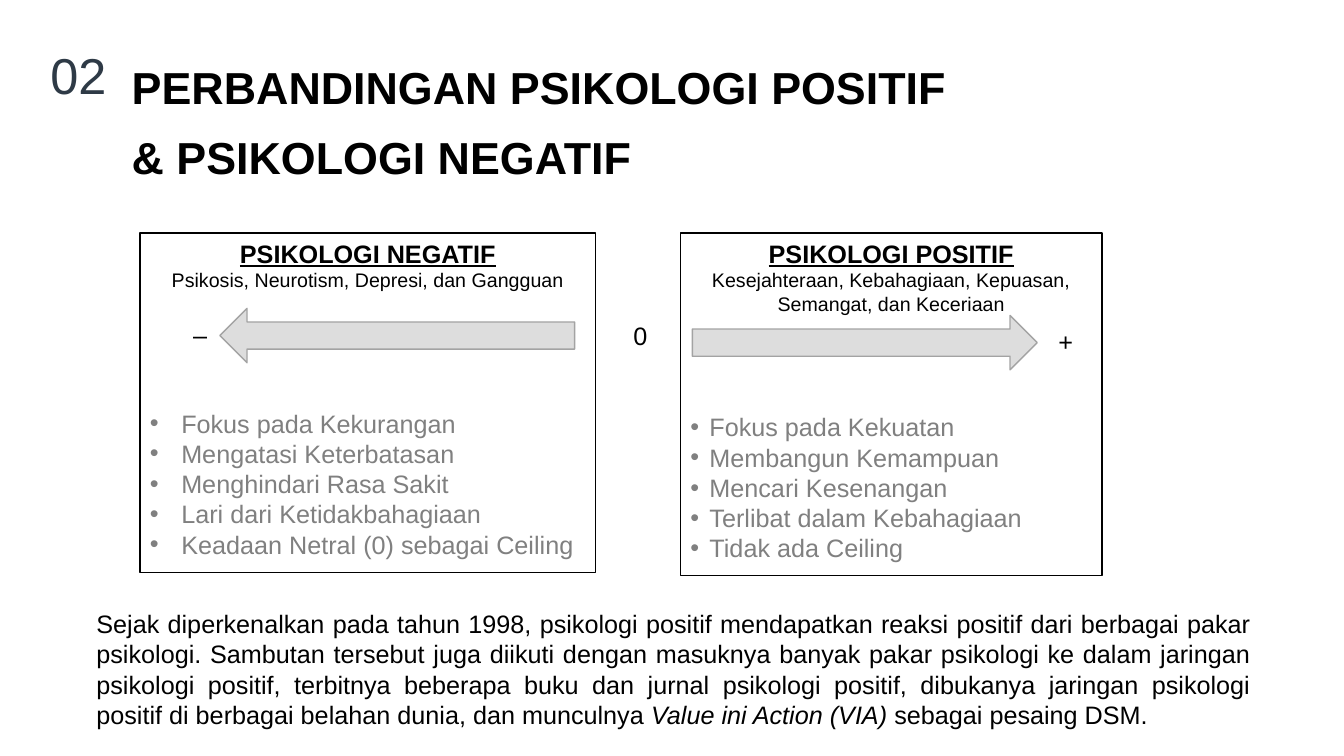
import pptx
import pptx.util
import pptx.dml.color
import pptx.enum.shapes
import pptx.enum.text
import pptx.oxml
import pptx.oxml.ns
import lxml.etree

Cm = pptx.util.Cm
Pt = pptx.util.Pt
Align = pptx.enum.text.PP_ALIGN
Shape = pptx.enum.shapes.MSO_SHAPE

COLOURS = {
    "ink": "000000",
    "number": "2E3A46",
    "muted": "808080",
    "paper": "FFFFFF",
    "arrow": "DDDDDD",
    "arrow_edge": "A3A3A3",
}

PANELS = [
    {
        "box": (3.53, 5.87, 11.48, 8.56),
        "heading": "PSIKOLOGI NEGATIF",
        "examples": "Psikosis, Neurotism, Depresi, dan Gangguan",
        "points": [
            "Fokus pada Kekurangan",
            "Mengatasi Keterbatasan",
            "Menghindari Rasa Sakit",
            "Lari dari Ketidakbahagiaan",
            "Keadaan Netral (0) sebagai Ceiling",
        ],
        "indent": 0.79,
        "gap": 83,
        "arrow": (2.01, 1.9, 8.94),
        "rotation": 180,
        "sign": "–",
        "sign_left": 1.09,
    },
    {
        "box": (17.15, 5.87, 10.62, 8.64),
        "heading": "PSIKOLOGI POSITIF",
        "examples": "Kesejahteraan, Kebahagiaan, Kepuasan, Semangat, dan Keceriaan",
        "points": [
            "Fokus pada Kekuatan",
            "Membangun Kemampuan",
            "Mencari Kesenangan",
            "Terlibat dalam Kebahagiaan",
            "Tidak ada Ceiling",
        ],
        "indent": 0.48,
        "gap": 69,
        "arrow": (0.3, 2.08, 8.69),
        "rotation": 0,
        "sign": "+",
        "sign_left": 9.27,
    },
]


def colour(name):
    return pptx.dml.color.RGBColor.from_string(COLOURS[name])


def add_span(para, text, size, ink="ink", bold=False, italic=False, underline=False):
    span = para.add_run()
    span.text = text
    span.font.name = "Arial"
    span.font.size = Pt(size)
    span.font.bold = bold
    span.font.italic = italic
    span.font.underline = underline
    span.font.color.rgb = colour(ink)


def add_text(page, box, align=Align.LEFT):
    frame = page.shapes.add_textbox(*map(Cm, box)).text_frame
    frame.word_wrap = True
    para = frame.paragraphs[0]
    para.alignment = align
    return para


def add_filled(page, kind, box, fill, edge):
    shape = page.shapes.add_shape(kind, *map(Cm, box))
    shape.shadow.inherit = False
    shape.fill.solid()
    shape.fill.fore_color.rgb = colour(fill)
    shape.line.color.rgb = colour(edge)
    shape.line.width = Pt(1)
    return shape


def add_bullet(para, indent):
    properties = para._p.get_or_add_pPr()
    properties.set("marL", str(Cm(indent)))
    properties.set("indent", str(-Cm(indent)))
    font = lxml.etree.SubElement(properties, pptx.oxml.ns.qn("a:buFont"))
    font.set("typeface", "Arial")
    mark = lxml.etree.SubElement(properties, pptx.oxml.ns.qn("a:buChar"))
    mark.set("char", "•")


def add_title(page, box):
    left, top, width, height = box
    para = add_text(page, (left + 2.05, top, width - 2.05, height))
    para.line_spacing = 1.3
    add_span(para, "PERBANDINGAN PSIKOLOGI POSITIF & PSIKOLOGI NEGATIF", 32, bold=True)
    number = add_text(page, (left, top, 3.12, 1.8))
    add_span(number, "02", 36, "number")


def add_sign(page, left, top, text, align=Align.LEFT):
    add_span(add_text(page, (left, top, 1.4, 1.02), align), text, 18)


def add_panel(page, panel):
    left, top, width, height = panel["box"]
    frame = add_filled(page, Shape.RECTANGLE, panel["box"], "paper", "ink").text_frame
    frame.word_wrap = True
    frame.vertical_anchor = pptx.enum.text.MSO_ANCHOR.TOP
    heading = frame.paragraphs[0]
    heading.alignment = Align.CENTER
    add_span(heading, panel["heading"], 18, bold=True, underline=True)
    examples = frame.add_paragraph()
    examples.alignment = Align.CENTER
    add_span(examples, panel["examples"], 14)
    for index, point in enumerate(panel["points"]):
        para = frame.add_paragraph()
        para.alignment = Align.LEFT
        para.space_before = Pt(0 if index else panel["gap"])
        add_bullet(para, panel["indent"])
        add_span(para, point, 18, "muted")

    across, down, length = panel["arrow"]
    arrow_box = (left + across, top + down, length, 1.37)
    arrow = add_filled(page, Shape.RIGHT_ARROW, arrow_box, "arrow", "arrow_edge")
    arrow.rotation = panel["rotation"]
    add_sign(page, left + panel["sign_left"], top + down + 0.15, panel["sign"])


def add_summary(page, box):
    para = add_text(page, box, Align.JUSTIFY)
    add_span(
        para,
        "Sejak diperkenalkan pada tahun 1998, psikologi positif mendapatkan reaksi "
        "positif dari berbagai pakar psikologi. Sambutan tersebut juga diikuti dengan "
        "masuknya banyak pakar psikologi ke dalam jaringan psikologi positif, "
        "terbitnya beberapa buku dan jurnal psikologi positif, dibukanya jaringan "
        "psikologi positif di berbagai belahan dunia, dan munculnya ",
        18,
    )
    add_span(para, "Value ini Action (VIA) ", 18, italic=True)
    add_span(para, "sebagai pesaing DSM.", 18)


def main():
    deck = pptx.Presentation()
    deck.slide_width = Cm(33.87)
    deck.slide_height = Cm(19.05)
    page = deck.slides.add_slide(deck.slide_layouts[6])
    add_title(page, (1.02, 0.98, 23.41, 3.63))
    for panel in PANELS:
        add_panel(page, panel)
    add_sign(page, 15.44, 7.95, "0", Align.CENTER)
    add_summary(page, (2.18, 15.21, 29.59, 3.33))
    deck.save("out.pptx")


if __name__ == "__main__":
    main()
